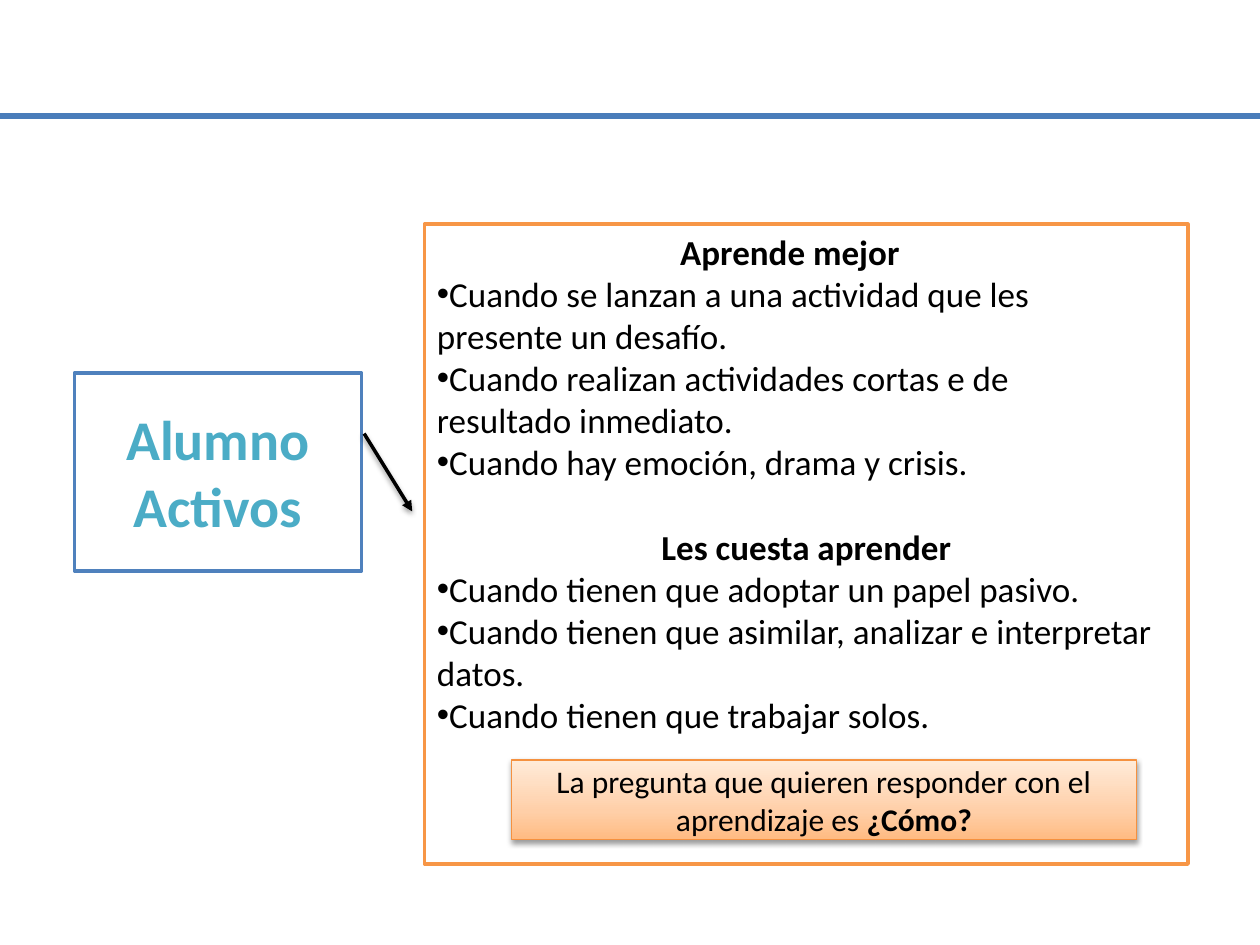
from dataclasses import dataclass

import lxml.etree
import pptx
import pptx.dml.color
import pptx.enum.shapes
import pptx.enum.text
import pptx.oxml
import pptx.oxml.ns
import pptx.util

Cm = pptx.util.Cm
Pt = pptx.util.Pt
qn = pptx.oxml.ns.qn
ALIGN = pptx.enum.text.PP_ALIGN
ANCHOR = pptx.enum.text.MSO_ANCHOR

COLORS = {
    "white": "FFFFFF",
    "black": "000000",
    "rule": "4A7DBA",
    "blue": "4F81BD",
    "aqua": "4BACC6",
    "orange": "F79646",
    "question_line": "F5913F",
}
QUESTION_STOPS = [(0, "FFBB82"), (35, "FFCFA8"), (100, "FFEBD9")]


@dataclass
class Box:
    left: float
    top: float
    width: float
    height: float
    line: str
    line_width: float
    anchor: ANCHOR


@dataclass
class Line:
    x1: float
    y1: float
    x2: float
    y2: float
    color: str
    width: float
    arrow: bool = False


@dataclass
class Section:
    heading: str
    bullets: list[str]
    space_before: float = 0
    right_margin: float = 0


TOPIC_BOX = Box(1.5, 7.52, 5.79, 3.99, "blue", 2, ANCHOR.MIDDLE)
DETAIL_BOX = Box(8.56, 4.52, 15.39, 12.9, "orange", 2, ANCHOR.TOP)
QUESTION_BOX = Box(10.31, 15.32, 12.6, 1.6, "question_line", 0.75, ANCHOR.MIDDLE)
RULE = Line(0, 2.34, 25.4, 2.34, "rule", 3)
ARROW = Line(7.34, 8.74, 8.31, 10.31, "black", 2, arrow=True)

SECTIONS = [
    Section("Aprende mejor", [
        "Cuando se lanzan a una actividad que les presente un desafío.",
        "Cuando realizan actividades cortas e de resultado inmediato.",
        "Cuando hay emoción, drama y crisis.",
    ], right_margin=0.66),
    Section("Les cuesta aprender", [
        "Cuando tienen que adoptar un papel pasivo.",
        "Cuando tienen que asimilar, analizar e interpretar datos.",
        "Cuando tienen que trabajar solos.",
    ], space_before=24.4),
]


def rgb(name: str) -> pptx.dml.color.RGBColor:
    return pptx.dml.color.RGBColor.from_string(COLORS[name])


def add_shadow(effects) -> None:
    shadow = lxml.etree.SubElement(
        effects, qn("a:outerShdw"), blurRad=str(Pt(3.1)), dist=str(Pt(1.6)),
        dir="5400000", rotWithShape="0")
    color = lxml.etree.SubElement(shadow, qn("a:srgbClr"), val=COLORS["black"])
    lxml.etree.SubElement(color, qn("a:alpha"), val="38000")


def add_line(s, line: Line) -> None:
    c = s.shapes.add_connector(
        pptx.enum.shapes.MSO_CONNECTOR.STRAIGHT,
        Cm(line.x1), Cm(line.y1), Cm(line.x2), Cm(line.y2))
    c.line.color.rgb = rgb(line.color)
    c.line.width = Pt(line.width)
    sp_pr = c.element.spPr
    effects = lxml.etree.SubElement(sp_pr, qn("a:effectLst"))
    if line.arrow:
        lxml.etree.SubElement(sp_pr.find(qn("a:ln")), qn("a:tailEnd"), type="triangle")
        add_shadow(effects)


def add_box(s, box: Box):
    sp = s.shapes.add_shape(
        pptx.enum.shapes.MSO_SHAPE.RECTANGLE,
        Cm(box.left), Cm(box.top), Cm(box.width), Cm(box.height))
    sp.shadow.inherit = False
    sp.fill.solid()
    sp.fill.fore_color.rgb = rgb("white")
    sp.line.color.rgb = rgb(box.line)
    sp.line.width = Pt(box.line_width)
    sp.text_frame.word_wrap = True
    sp.text_frame.vertical_anchor = box.anchor
    return sp


def style_paragraph(p, size: float, color: str, bold: bool, align: ALIGN) -> None:
    p.alignment = align
    for r in p.runs:
        r.font.name = "Calibri"
        r.font.size = Pt(size)
        r.font.bold = bold
        r.font.color.rgb = rgb(color)


def add_bullet(p) -> None:
    p_pr = p._p.get_or_add_pPr()
    p_pr.set("marL", "0")
    p_pr.set("indent", str(Cm(-0.36)))
    lxml.etree.SubElement(p_pr, qn("a:buFont"), typeface="Arial")
    lxml.etree.SubElement(p_pr, qn("a:buChar"), char="•")


def write_sections(tf, sections: list[Section]) -> None:
    for i, section in enumerate(sections):
        p = tf.add_paragraph() if i else tf.paragraphs[0]
        p.text = section.heading
        style_paragraph(p, 20, "black", True, ALIGN.CENTER)
        p._p.get_or_add_pPr().set("marR", str(Cm(section.right_margin)))
        if section.space_before:
            p.space_before = Pt(section.space_before)
        for bullet in section.bullets:
            p = tf.add_paragraph()
            p.text = bullet
            add_bullet(p)
            style_paragraph(p, 20, "black", False, ALIGN.LEFT)


def fill_gradient(sp, stops: list[tuple[int, str]]) -> None:
    sp.fill.gradient()
    sp.fill.gradient_angle = 90
    gs_lst = sp.element.spPr.find(qn("a:gradFill")).find(qn("a:gsLst"))
    for gs in list(gs_lst):
        gs_lst.remove(gs)
    for position, color in stops:
        gs = lxml.etree.SubElement(gs_lst, qn("a:gs"), pos=str(position * 1000))
        lxml.etree.SubElement(gs, qn("a:srgbClr"), val=color)


def main() -> None:
    prs = pptx.Presentation()
    prs.slide_width, prs.slide_height = Cm(25.4), Cm(19.05)
    s = prs.slides.add_slide(prs.slide_layouts[6])

    add_line(s, RULE)
    write_sections(add_box(s, DETAIL_BOX).text_frame, SECTIONS)

    topic = add_box(s, TOPIC_BOX)
    topic.text_frame.text = "Alumno Activos"
    style_paragraph(topic.text_frame.paragraphs[0], 32, "aqua", True, ALIGN.CENTER)

    question = add_box(s, QUESTION_BOX)
    fill_gradient(question, QUESTION_STOPS)
    add_shadow(question.element.spPr.find(qn("a:effectLst")))
    p = question.text_frame.paragraphs[0]
    p.text = "La pregunta que quieren responder con el aprendizaje es "
    answer = p.add_run()
    answer.text = "¿Cómo?"
    style_paragraph(p, 18, "black", False, ALIGN.CENTER)
    answer.font.bold = True

    add_line(s, ARROW)
    prs.save("out.pptx")


if __name__ == "__main__":
    main()
